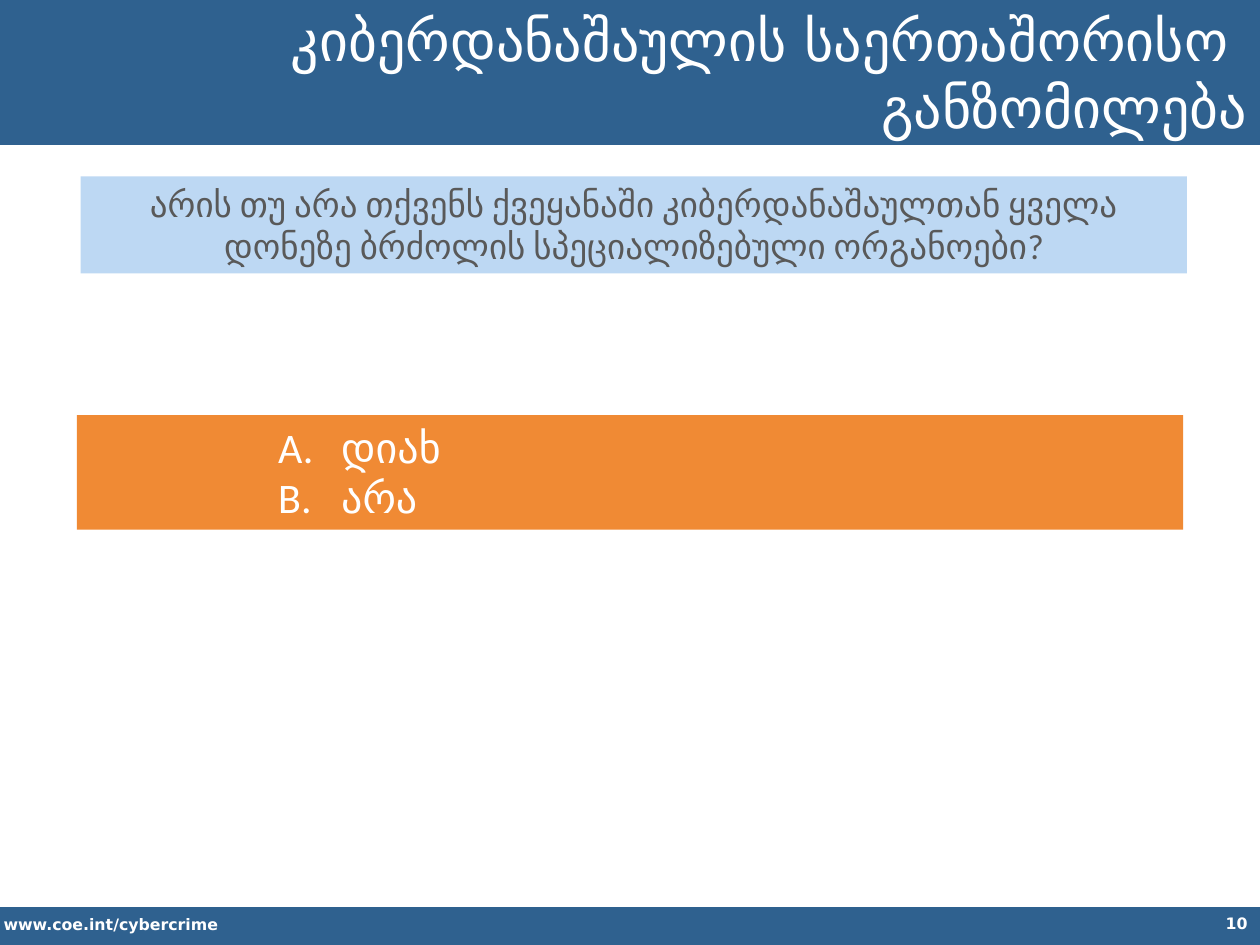
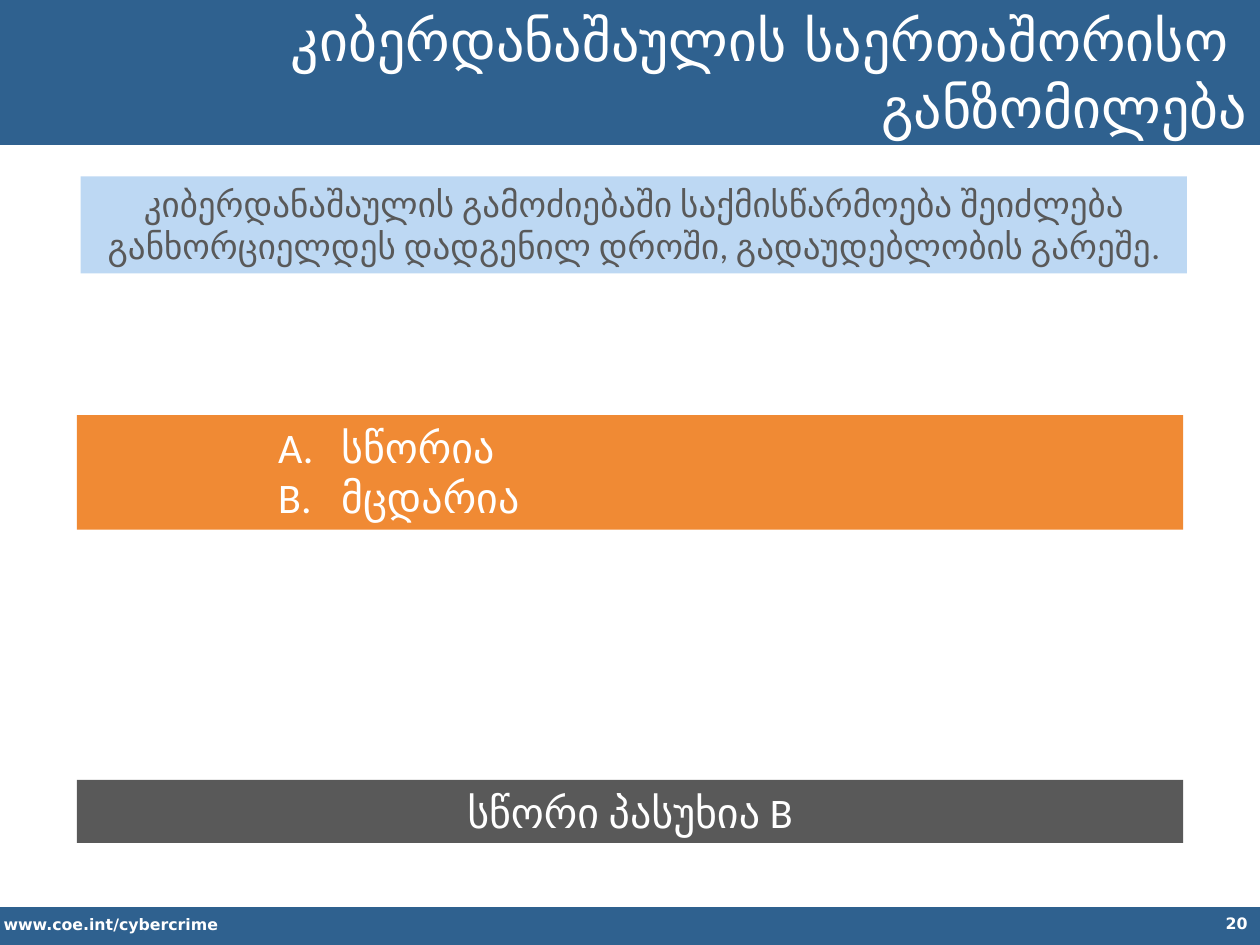
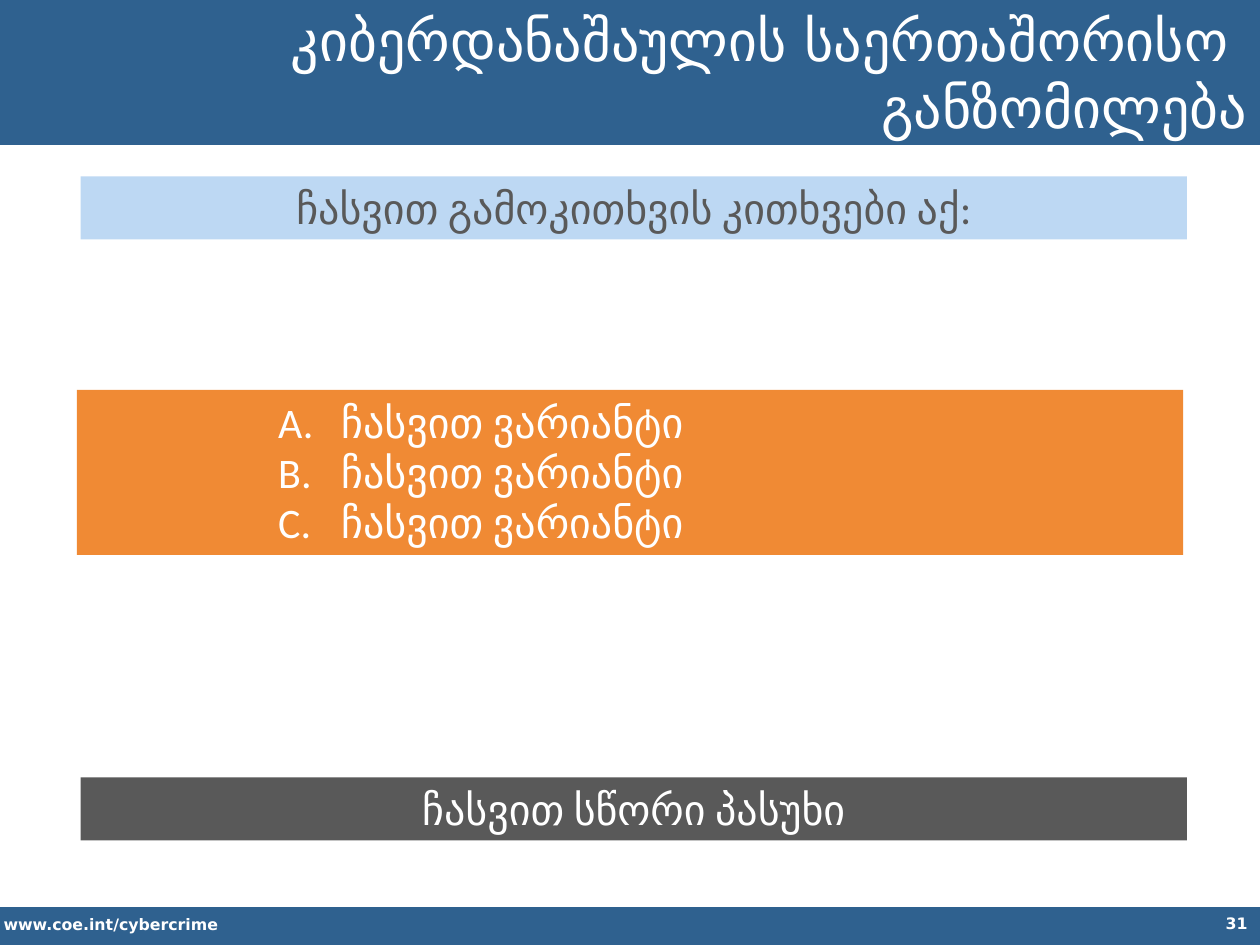
"""Build three polling slides on the international dimension of cybercrime."""
from dataclasses import dataclass

from lxml import etree
from pptx import Presentation, util as u
from pptx.dml.color import RGBColor
from pptx.enum import shapes, text as t
from pptx.oxml.ns import qn


@dataclass(frozen=True)
class Theme:
    blue: str = "2F618F"
    pale: str = "BDD8F3"
    orange: str = "F08A34"
    grey: str = "595959"
    white: str = "FFFFFF"
    heading_font: str = "DejaVu Sans"
    body_font: str = "Calibri"
    title_size: int = 32
    body_size: int = 24
    long_size: int = 20
    footer_size: int = 9


theme = Theme()


def add_text(slide, at, *lines, fill=None, size=theme.body_size, font=theme.body_font,
             color=theme.white, bold=False, align=t.PP_ALIGN.CENTER,
             anchor=t.MSO_ANCHOR.TOP, grow=False, lettered=False):
    """Add a box of text, filled when a colour is given, lettered A, B, C on request."""
    area = [u.Inches(length) for length in at]
    if fill:
        box = slide.shapes.add_shape(shapes.MSO_SHAPE.RECTANGLE, *area)
        box.shadow.inherit = False
        box.fill.solid()
        box.fill.fore_color.rgb = RGBColor.from_string(fill)
        box.line.fill.background()
    else:
        box = slide.shapes.add_textbox(*area)
    frame = box.text_frame
    frame.word_wrap = True
    frame.vertical_anchor = anchor
    frame.auto_size = t.MSO_AUTO_SIZE.SHAPE_TO_FIT_TEXT if grow else t.MSO_AUTO_SIZE.NONE
    for index, line in enumerate(lines):
        paragraph = frame.add_paragraph() if index else frame.paragraphs[0]
        paragraph.alignment = align
        if lettered:
            paragraph.level = 3
            layout = paragraph._p.get_or_add_pPr()
            layout.set("marL", str(u.Inches(2)))
            layout.set("indent", str(u.Inches(-0.5)))
            etree.SubElement(layout, qn("a:buFont"), typeface="+mj-lt")
            etree.SubElement(layout, qn("a:buAutoNum"), type="alphaUcPeriod")
        run = paragraph.add_run()
        run.text = line
        run.font.size = u.Pt(size)
        run.font.name = font
        run.font.bold = bold
        run.font.color.rgb = RGBColor.from_string(color)


polls = [
    dict(number="10", size=theme.long_size, height=0.77,
         question="არის თუ არა თქვენს ქვეყანაში კიბერდანაშაულთან ყველა დონეზე "
                  "ბრძოლის სპეციალიზებული ორგანოები?",
         options=["დიახ", "არა"], answer=None),
    dict(number="20", size=theme.long_size, height=0.77,
         question="კიბერდანაშაულის გამოძიებაში საქმისწარმოება შეიძლება "
                  "განხორციელდეს დადგენილ დროში, გადაუდებლობის გარეშე.",
         options=["სწორია", "მცდარია"], answer="სწორი პასუხია B", answer_at=(0.61, 6.19)),
    dict(number="31", size=theme.body_size, height=0.5,
         question="ჩასვით გამოკითხვის კითხვები აქ:",
         options=["ჩასვით ვარიანტი"] * 3, answer="ჩასვით სწორი პასუხი",
         answer_at=(0.64, 6.17)),
]
panel_width = 8.78
options_middle = 3.75
footer = dict(size=theme.footer_size, font=theme.heading_font, bold=True)

deck = Presentation()
deck.slide_width, deck.slide_height = u.Inches(10), u.Inches(7.5)

for poll in polls:
    slide = deck.slides.add_slide(deck.slide_layouts[6])
    add_text(slide, (0, 0, 10, 1.15), fill=theme.blue)
    add_text(slide, (0, 7.2, 10, 0.3), fill=theme.blue)
    add_text(slide, (-0.07, 7.21, 3.52, 0.25), "www.coe.int/cybercrime",
             align=t.PP_ALIGN.LEFT, grow=True, **footer)
    add_text(slide, (7.67, 7.2, 2.33, 0.3), poll["number"],
             align=t.PP_ALIGN.RIGHT, **footer)
    add_text(slide, (2.2, 0.07, 7.8, 1.01), "კიბერდანაშაულის საერთაშორისო ", "განზომილება",
             fill=theme.blue, size=theme.title_size, font=theme.heading_font,
             align=t.PP_ALIGN.RIGHT, anchor=t.MSO_ANCHOR.MIDDLE)
    add_text(slide, (0.64, 1.4, panel_width, poll["height"]), poll["question"],
             fill=theme.pale, size=poll["size"], color=theme.grey, grow=True)
    if poll["answer"]:
        add_text(slide, (*poll["answer_at"], panel_width, 0.5), poll["answer"],
                 fill=theme.grey, grow=True)
    options_height = 0.4 * len(poll["options"]) + 0.11
    add_text(slide, (0.61, options_middle - options_height / 2, panel_width, options_height),
             *poll["options"], fill=theme.orange, align=t.PP_ALIGN.LEFT,
             grow=True, lettered=True)

deck.save("out.pptx")
